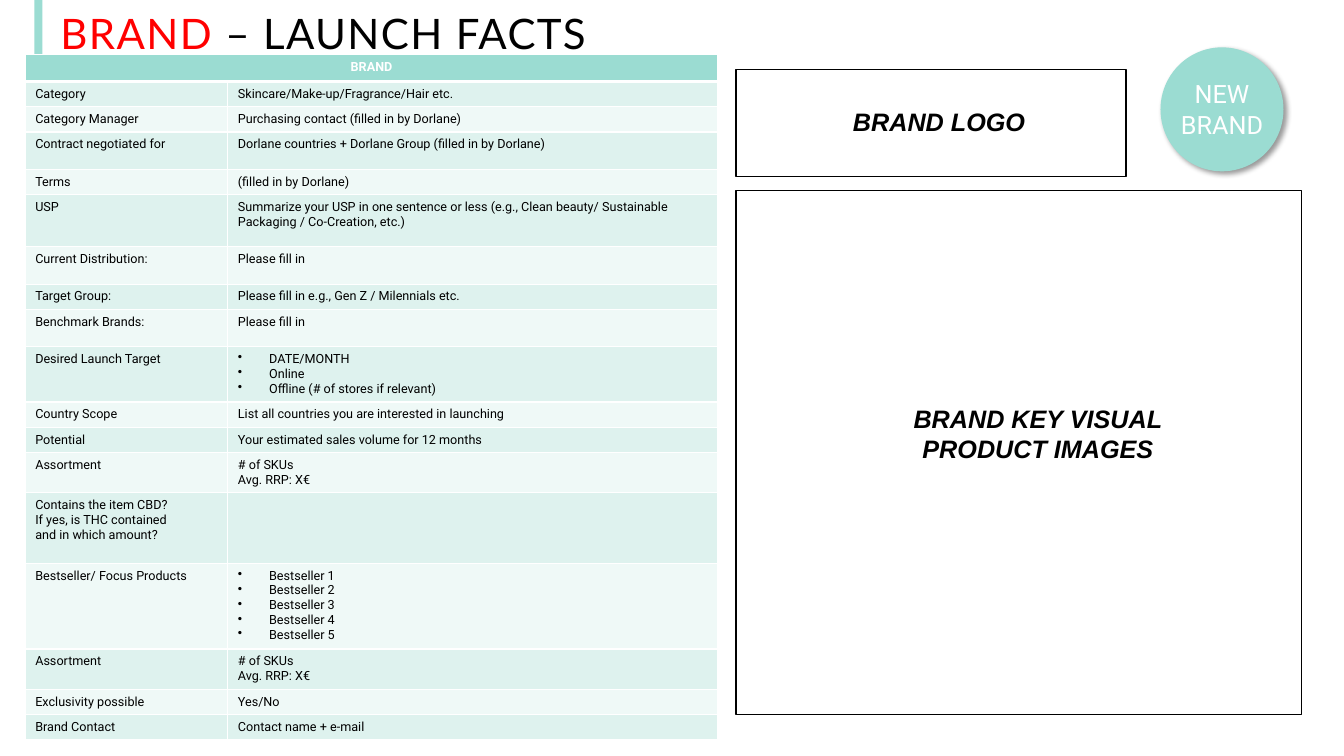
from dataclasses import dataclass

import lxml.etree
import pptx
import pptx.dml.color
import pptx.enum.shapes
import pptx.enum.text
import pptx.oxml
import pptx.oxml.ns
import pptx.util

PX = 9144
MINT = "9BDCD2"
BANDS = ("DEF2EE", "EFF9F7")
WHITE, BLACK, RED = "FFFFFF", "000000", "FF0000"
KIND = pptx.enum.shapes.MSO_SHAPE
ALIGN = pptx.enum.text.PP_ALIGN
NS = pptx.oxml.ns.nsdecls("a")


@dataclass(frozen=True)
class Box:
    left: int
    top: int
    width: int
    height: int

    def emu(self) -> tuple[int, int, int, int]:
        return self.left * PX, self.top * PX, self.width * PX, self.height * PX


@dataclass(frozen=True)
class Style:
    face: str
    size: int
    hue: str = BLACK
    bold: bool = False
    slant: bool = False
    space: int = 0


@dataclass(frozen=True)
class Fact:
    high: int
    label: tuple[str, ...]
    value: tuple[str, ...]
    list: bool = False


@dataclass(frozen=True)
class Shape:
    kind: int
    box: Box
    fill: str | None = None
    line: str | None = None
    shade: bool = False


@dataclass(frozen=True)
class Label:
    box: Box
    lines: tuple[tuple[tuple[str, Style], ...], ...]
    align: int = ALIGN.LEFT


HEAD = Style("Roboto", 9, WHITE, bold=True)
BODY = Style("Roboto", 9)
BADGE = Style("Roboto", 18, WHITE)
HINT = Style("Arial", 18, bold=True, slant=True)

SHAPES = (
    Shape(KIND.RECTANGLE, Box(34, 0, 8, 118), fill=MINT),
    Shape(KIND.OVAL, Box(1151, 47, 122, 123), fill=MINT, shade=True),
    Shape(KIND.RECTANGLE, Box(730, 69, 387, 106), line=BLACK),
    Shape(KIND.RECTANGLE, Box(730, 189, 561, 520), line=BLACK),
)

LABELS = (
    Label(Box(60, 7, 1213, 84), ((
        ("BRAND", Style("Lato", 30, RED, space=100)),
        (" – LAUNCH FACTS", Style("Lato", 30, space=100)),
    ),)),
    Label(Box(1169, 78, 86, 61), ((("NEW", BADGE),), (("BRAND", BADGE),)), ALIGN.CENTER),
    Label(Box(846, 106, 199, 30), ((("BRAND LOGO", HINT),),)),
    Label(Box(876, 400, 307, 59),
          ((("BRAND KEY VISUAL", HINT),), (("PRODUCT IMAGES", HINT),)), ALIGN.CENTER),
)

STOCK = ("# of SKUs", "Avg. RRP: X€")
FACTS = (
    Fact(25, ("Category",), ("Skincare/Make-up/Fragrance/Hair etc.",)),
    Fact(25, ("Category Manager",), ("Purchasing contact (filled in by Dorlane)",)),
    Fact(37, ("Contract negotiated for",),
         ("Dorlane countries + Dorlane Group (filled in by Dorlane)",)),
    Fact(25, ("Terms",), ("(filled in by Dorlane)",)),
    Fact(52, ("USP",), ("Summarize your USP in one sentence or less (e.g., Clean beauty/ "
                        "Sustainable Packaging / Co-Creation, etc.)",)),
    Fact(37, ("Current Distribution:",), ("Please fill in",)),
    Fact(25, ("Target Group:",), ("Please fill in e.g., Gen Z / Milennials etc.",)),
    Fact(37, ("Benchmark Brands:",), ("Please fill in",)),
    Fact(55, ("Desired Launch Target",),
         ("DATE/MONTH", "Online", "Offline (# of stores if relevant)"), True),
    Fact(25, ("Country Scope",), ("List all countries you are interested in launching",)),
    Fact(25, ("Potential",), ("Your estimated sales volume for 12 months",)),
    Fact(40, ("Assortment",), STOCK),
    Fact(70, ("Contains the item CBD?", "If yes, is THC contained \nand in which amount?"), ()),
    Fact(85, ("Bestseller/ Focus Products",),
         tuple(f"Bestseller {rank}" for rank in range(1, 6)), True),
    Fact(40, ("Assortment",), STOCK),
    Fact(25, ("Exclusivity possible",), ("Yes/No",)),
    Fact(25, ("Brand Contact",), ("Contact name + e-mail",)),
)


def tint(hue: str) -> pptx.dml.color.RGBColor:
    return pptx.dml.color.RGBColor.from_string(hue)


def add_run(para, text: str, style: Style) -> None:
    for index, part in enumerate(text.split("\n")):
        if index:
            para.add_line_break()
        run = para.add_run()
        run.text = part
        font = run.font
        font.name, font.size = style.face, pptx.util.Pt(style.size)
        font.bold, font.italic = style.bold, style.slant
        font.color.rgb = tint(style.hue)
        if style.space:
            run._r.get_or_add_rPr().set("spc", str(style.space))


def add_lines(frame, lines, align: int, dots: bool = False) -> None:
    for index, line in enumerate(lines):
        para = frame.add_paragraph() if index else frame.paragraphs[0]
        para.alignment = align
        if dots:
            props = para._p.get_or_add_pPr()
            props.set("marL", str(31 * PX))
            props.set("indent", str(-31 * PX))
            props.append(pptx.oxml.parse_xml(f'<a:buChar {NS} char="•"/>'))
        for text, style in line:
            add_run(para, text, style)


def draw_shape(slide, item: Shape) -> None:
    shape = slide.shapes.add_shape(item.kind, *item.box.emu())
    shape.shadow.inherit = False
    if item.fill:
        shape.fill.solid()
        shape.fill.fore_color.rgb = tint(item.fill)
    else:
        shape.fill.background()
    if item.line:
        shape.line.color.rgb = tint(item.line)
        shape.line.width = pptx.util.Pt(1)
    else:
        shape.line.fill.background()
    if item.shade:
        shape._element.spPr.find(pptx.oxml.ns.qn("a:effectLst")).append(pptx.oxml.parse_xml(
            f'<a:outerShdw {NS} blurRad="50800" dist="38100" dir="2700000" rotWithShape="0">'
            f'<a:srgbClr val="{BLACK}"><a:alpha val="40000"/></a:srgbClr></a:outerShdw>'))


def draw_label(slide, item: Label) -> None:
    frame = slide.shapes.add_textbox(*item.box.emu()).text_frame
    frame.word_wrap = True
    frame.margin_left = frame.margin_top = frame.margin_right = frame.margin_bottom = 0
    add_lines(frame, item.lines, item.align)


def paint(cell, hue: str, base: int = 1) -> None:
    props = cell._tc.get_or_add_tcPr()
    for side, width in (("L", 1), ("R", 1), ("T", 1), ("B", base)):
        props.append(pptx.oxml.parse_xml(
            f'<a:ln{side} {NS} w="{pptx.util.Pt(width)}"><a:solidFill>'
            f'<a:srgbClr val="{WHITE}"/></a:solidFill></a:ln{side}>'))
    cell.fill.solid()
    cell.fill.fore_color.rgb = tint(hue)


def draw_table(slide, facts: tuple[Fact, ...]) -> None:
    head = 27
    area = Box(25, 54, 687, head + sum(fact.high for fact in facts))
    table = slide.shapes.add_table(len(facts) + 1, 2, *area.emu()).table
    table.first_row = table.horz_banding = False
    for column, width in zip(table.columns, (201, 486)):
        column.width = width * PX
    table.rows[0].height = head * PX
    table.cell(0, 0).merge(table.cell(0, 1))
    for col in range(2):
        paint(table.cell(0, col), MINT, 3)
    add_lines(table.cell(0, 0).text_frame, ((("BRAND", HEAD),),), ALIGN.CENTER)
    for row, fact in enumerate(facts, 1):
        table.rows[row].height = fact.high * PX
        for col, texts in enumerate((fact.label, fact.value)):
            cell = table.cell(row, col)
            paint(cell, BANDS[(row - 1) % 2])
            lines = [((text, BODY),) for text in texts]
            add_lines(cell.text_frame, lines, ALIGN.LEFT, fact.list and col == 1)


def main() -> None:
    deck = pptx.Presentation()
    deck.slide_width, deck.slide_height = 1333 * PX, 750 * PX
    slide = deck.slides.add_slide(deck.slide_layouts[6])
    for shape in SHAPES:
        draw_shape(slide, shape)
    draw_table(slide, FACTS)
    for label in LABELS:
        draw_label(slide, label)
    deck.save("out.pptx")


if __name__ == "__main__":
    main()
